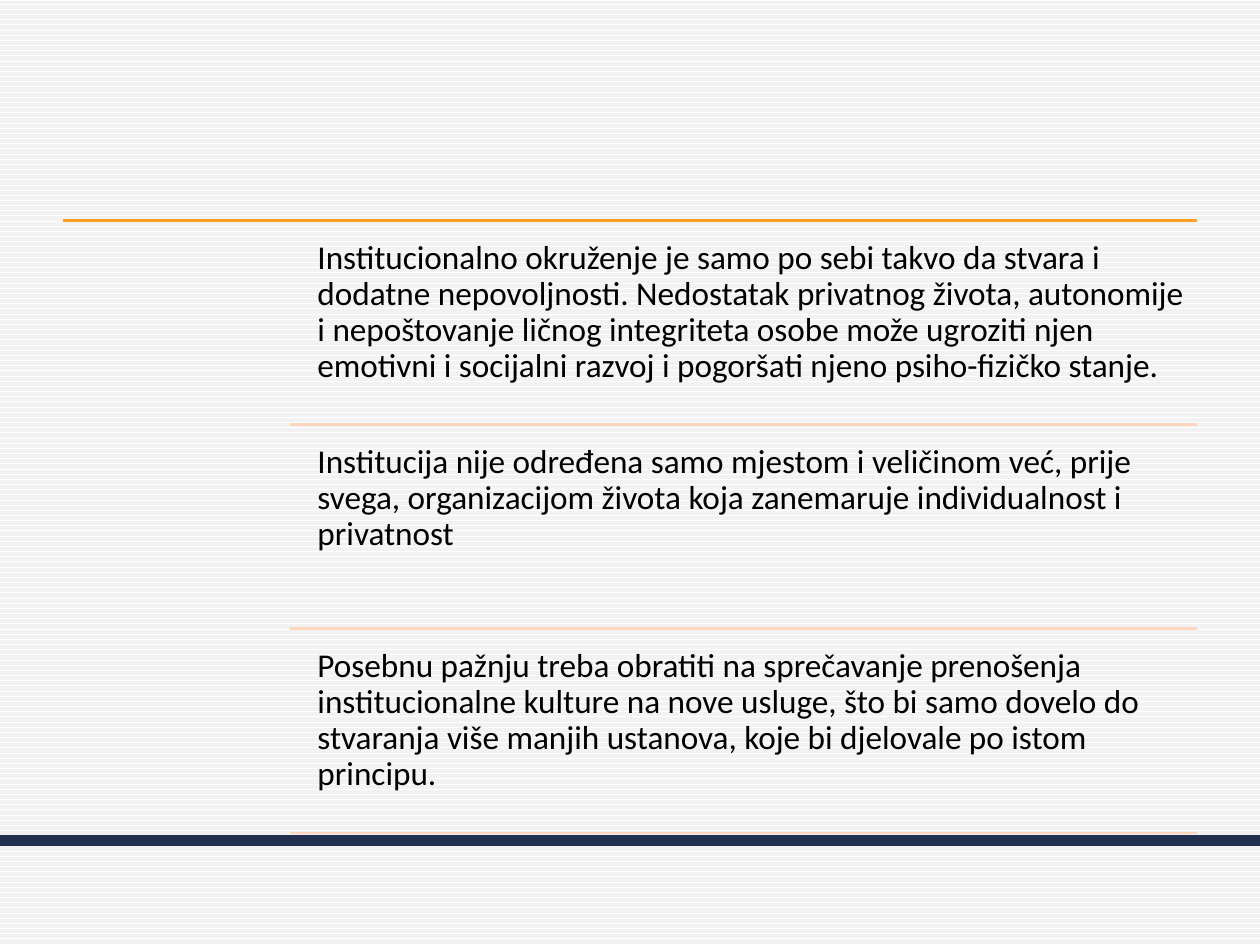
from dataclasses import dataclass

from lxml import etree
from pptx import Presentation
from pptx.dml.color import RGBColor
from pptx.enum.dml import MSO_PATTERN
from pptx.enum.shapes import MSO_CONNECTOR
from pptx.oxml.ns import qn
from pptx.util import Inches, Pt

STRAIGHT = MSO_CONNECTOR.STRAIGHT
STRIPES = MSO_PATTERN.DARK_HORIZONTAL


@dataclass(frozen=True)
class Theme:
    font: str = "Calibri"
    size: float = 19
    text: str = "000000"
    stripe: str = "F2F2F2"
    paper: str = "FFFFFF"
    accent: str = "FDA023"
    divider: str = "FED6BD"
    footer: str = "232F4E"
    thin: float = 1.5
    thick: float = 6


THEME = Theme()

TOP, PITCH = 1.75, 1.62
LEFT, INDENT, RIGHT = 0.5, 2.3, 9.5
STATEMENTS = [
    "Institucionalno okruženje je samo po sebi takvo da stvara i dodatne "
    "nepovoljnosti. Nedostatak privatnog života, autonomije i nepoštovanje "
    "ličnog integriteta osobe može ugroziti njen emotivni i socijalni razvoj "
    "i pogoršati njeno psiho-fizičko stanje.",
    "Institucija nije određena samo mjestom i veličinom već, prije svega, "
    "organizacijom života koja zanemaruje individualnost i privatnost",
    "Posebnu pažnju treba obratiti na sprečavanje prenošenja institucionalne "
    "kulture na nove usluge, što bi samo dovelo do stvaranja više manjih "
    "ustanova, koje bi djelovale po istom principu.",
]


def set_background(s):
    fill = s.background.fill
    fill.patterned()
    fill.pattern = STRIPES
    fill.fore_color.rgb = RGBColor.from_string(THEME.stripe)
    fill.back_color.rgb = RGBColor.from_string(THEME.paper)


def add_rule(s, x1, x2, y, color, width):
    line = s.shapes.add_connector(
        STRAIGHT, Inches(x1), Inches(y), Inches(x2), Inches(y))
    line.line.color.rgb = RGBColor.from_string(color)
    line.line.width = Pt(width)
    etree.SubElement(line._element.spPr, qn("a:effectLst"))


def add_statement(s, y, text):
    sp = s.shapes.add_textbox(
        Inches(2.44), Inches(y), Inches(7.07), Inches(1.55))
    tf = sp.text_frame
    tf.word_wrap = True
    tf.margin_left = tf.margin_right = Inches(0.08)
    tf.margin_top = tf.margin_bottom = Inches(0.08)
    tf.text = text
    p = tf.paragraphs[0]
    p.line_spacing = 0.9
    font = p.runs[0].font
    font.name = THEME.font
    font.size = Pt(THEME.size)
    font.color.rgb = RGBColor.from_string(THEME.text)


def main():
    prs = Presentation()
    prs.slide_width, prs.slide_height = Inches(10), Inches(7.5)
    s = prs.slides.add_slide(prs.slide_layouts[6])
    set_background(s)

    # Top rule, then each statement closed by a divider
    add_rule(s, LEFT, RIGHT, TOP, THEME.accent, THEME.thin)
    for i, text in enumerate(STATEMENTS):
        y = TOP + i * PITCH
        add_statement(s, y + 0.08, text)
        add_rule(s, INDENT, RIGHT, y + PITCH, THEME.divider, THEME.thin)

    # Footer band across the slide
    add_rule(s, 0, 10, 6.67, THEME.footer, THEME.thick)
    prs.save("out.pptx")


if __name__ == "__main__":
    main()
